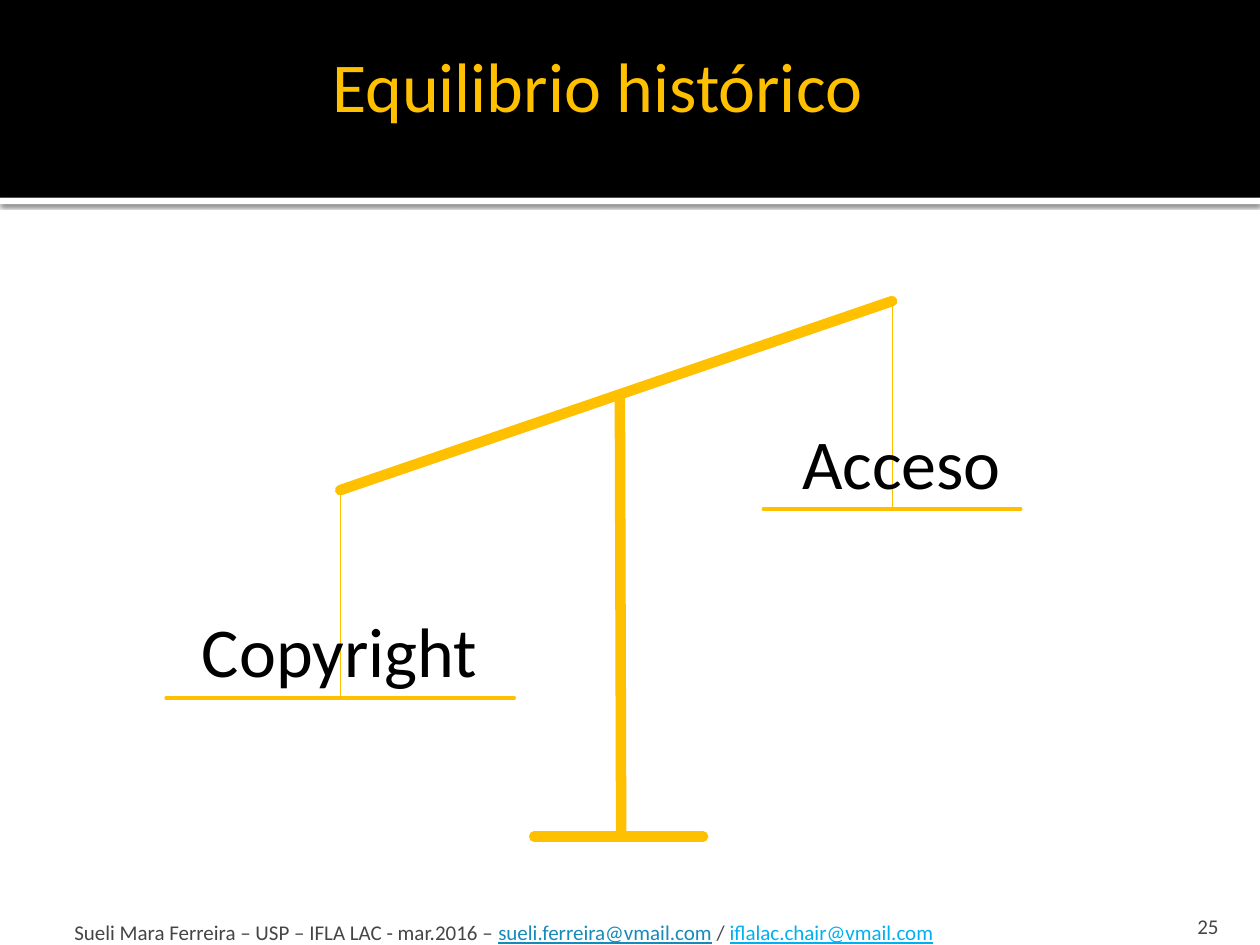
from pptx import Presentation
from pptx.dml.color import RGBColor
from pptx.enum.shapes import MSO_CONNECTOR, MSO_SHAPE
from pptx.enum.text import MSO_ANCHOR, MSO_AUTO_SIZE, PP_ALIGN
from pptx.oxml.ns import qn
from pptx.util import Inches, Pt
from lxml import etree

STRAIGHT = MSO_CONNECTOR.STRAIGHT
RECTANGLE = MSO_SHAPE.RECTANGLE
TOP, BOTTOM = MSO_ANCHOR.TOP, MSO_ANCHOR.BOTTOM
GROW, FIXED = MSO_AUTO_SIZE.SHAPE_TO_FIT_TEXT, MSO_AUTO_SIZE.NONE
LEFT, CENTER, RIGHT = PP_ALIGN.LEFT, PP_ALIGN.CENTER, PP_ALIGN.RIGHT

COLORS = {
    "white": "FFFFFF",
    "black": "000000",
    "gold": "FFC000",
    "gray": "454545",
    "teal": "168BBA",
    "sky": "00B0F0",
}


class ScaleSlide:
    """Draws bands, lines and text on one slide in a shared style."""

    font_name = "Calibri"

    def __init__(self, slide):
        self.shapes = slide.shapes

    def color(self, name):
        return RGBColor.from_string(COLORS[name])

    def band(self, top, height, fill):
        band = self.shapes.add_shape(
            RECTANGLE, 0, Inches(top), Inches(10), Inches(height))
        band.shadow.inherit = False
        band.fill.solid()
        band.fill.fore_color.rgb = self.color(fill)
        band.line.fill.background()
        return band

    def shadow(self, band):
        effects = band._element.spPr.find(qn("a:effectLst"))
        outer = etree.SubElement(
            effects, qn("a:outerShdw"), blurRad=str(Pt(2.5)),
            dist=str(Pt(0.8)), dir="5400000", rotWithShape="0")
        tint = etree.SubElement(outer, qn("a:srgbClr"), val=COLORS["black"])
        etree.SubElement(tint, qn("a:alpha"), val="60000")

    def line(self, start, end, width):
        line = self.shapes.add_connector(
            STRAIGHT, *(Inches(value) for value in (*start, *end)))
        line.line.color.rgb = self.color("gold")
        line.line.width = Pt(width)
        properties = line._element.spPr
        properties.find(qn("a:ln")).set("cap", "rnd")
        etree.SubElement(properties, qn("a:effectLst"))

    def text(self, box, runs, size, align, anchor=TOP, side=0.1, bottom=0.05,
             fit=GROW):
        frame = self.shapes.add_textbox(
            *(Inches(value) for value in box)).text_frame
        frame.word_wrap = True
        frame.auto_size = fit
        frame.vertical_anchor = anchor
        frame.margin_left = frame.margin_right = Inches(side)
        frame.margin_bottom = Inches(bottom)
        paragraph = frame.paragraphs[0]
        paragraph.alignment = align
        paragraph.font.name = self.font_name
        paragraph.font.size = Pt(size)
        for words, color, underline in runs:
            run = paragraph.add_run()
            run.text = words
            run.font.color.rgb = self.color(color)
            if underline:
                run.font.underline = True

    def label(self, left, top, width, words, color="black"):
        self.text((left, top, width, 0.77), [(words, color, False)], 40, CENTER)

    def pan(self, hook, left, right, bottom):
        self.line(hook, (hook[0], bottom), 0.5)
        self.line((left, bottom), (right, bottom), 2.25)


def main():
    presentation = Presentation()
    presentation.slide_width = Inches(10)
    presentation.slide_height = Inches(7.5)
    scale = ScaleSlide(
        presentation.slides.add_slide(presentation.slide_layouts[6]))

    scale.shadow(scale.band(1.57, 0.05, "white"))
    scale.band(0, 1.57, "black")
    scale.label(0.45, 0.29, 8.58, "Equilibrio histórico", "gold")

    low_end, high_end = (2.7, 3.89), (7.08, 2.39)
    scale.pan(high_end, 6.06, 8.1, 4.04)
    scale.pan(low_end, 1.32, 4.08, 5.54)
    scale.line((4.92, 3.13), (4.93, 6.64), 6)
    scale.line((4.24, 6.64), (5.58, 6.64), 6)
    scale.line(low_end, high_end, 6)
    scale.label(5.62, 3.28, 3.07, "Acceso")
    scale.label(1.16, 4.77, 3.07, "Copyright")

    scale.text((8.97, 7.15, 0.8, 0.3), [("25", "gray", False)], 12, RIGHT,
               BOTTOM, bottom=0, fit=FIXED)
    credit = [
        ("Sueli Mara Ferreira – USP – IFLA LAC - mar.2016 – ", "gray", False),
        ("sueli.ferreira@vmail.com", "teal", True),
        (" / ", "gray", False),
        ("iflalac.chair@vmail.com", "sky", True),
    ]
    scale.text((0.54, 7.08, 7.2, 0.42), credit, 12, LEFT, BOTTOM, side=0.05,
               bottom=0, fit=FIXED)

    presentation.save("out.pptx")


if __name__ == "__main__":
    main()
